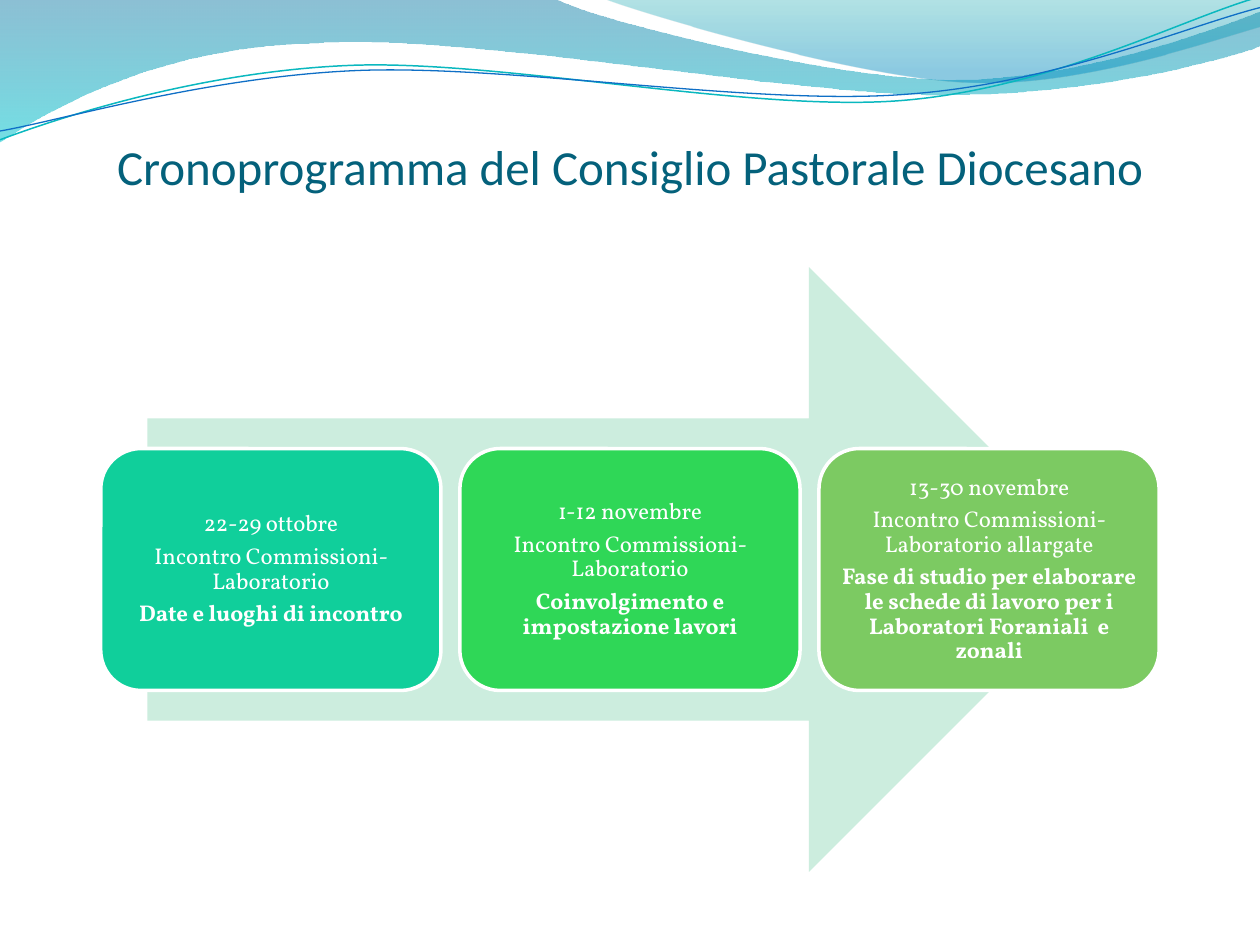
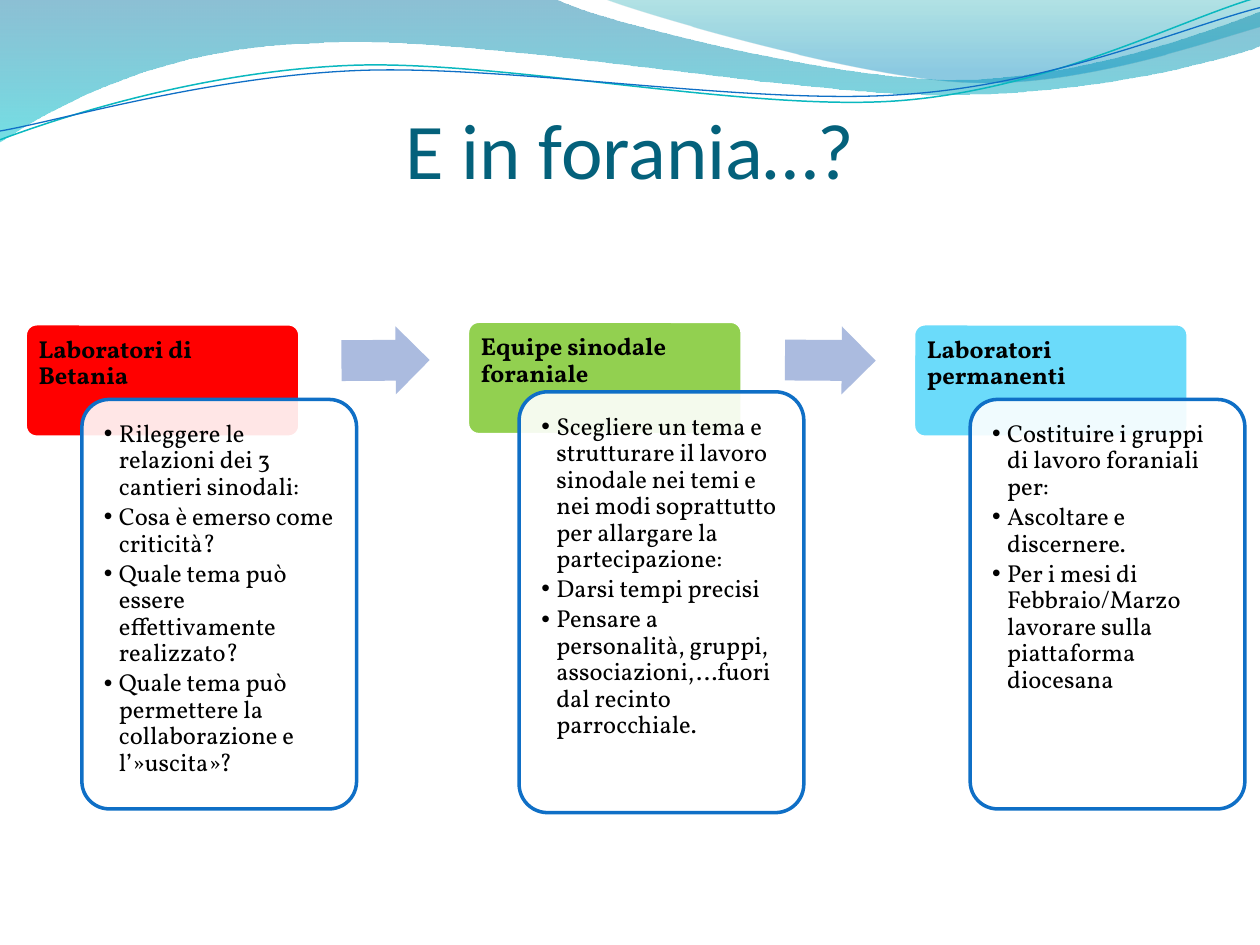
from math import cos, radians, sin

from lxml import etree
from pptx import Presentation
from pptx.dml.color import RGBColor
from pptx.enum.shapes import MSO_SHAPE
from pptx.enum.text import MSO_ANCHOR, PP_ALIGN
from pptx.oxml.ns import qn
from pptx.util import Inches, Pt

ROUND, ARROW = MSO_SHAPE.ROUNDED_RECTANGLE, MSO_SHAPE.RIGHT_ARROW
TOP, MIDDLE, BOTTOM = MSO_ANCHOR.TOP, MSO_ANCHOR.MIDDLE, MSO_ANCHOR.BOTTOM
LEFT, CENTER = PP_ALIGN.LEFT, PP_ALIGN.CENTER
WHITE, BLACK, BLUE, TEAL = "FFFFFF", "000000", "0F6FC6", "04617B"
BODY, HEAD = "Vollkorn", "Calibri"
TILT = 357.3
rgb = RGBColor.from_string


def block(slide, kind, rect, fill, line=None, adj=()):
    shape = slide.shapes.add_shape(kind, *map(Inches, rect))
    shape.shadow.inherit = False
    shape.fill.solid()
    shape.fill.fore_color.rgb = rgb(fill)
    if line:
        shape.line.color.rgb = rgb(line)
        shape.line.width = Pt(2)
    else:
        shape.line.fill.background()
    for i, value in enumerate(adj):
        shape.adjustments[i] = value
    return shape


def write(shape, texts, size, color, pad, anchor, align, face=BODY, bold=(), after=0, bullet=False):
    frame = shape.text_frame
    frame.word_wrap = True
    frame.vertical_anchor = anchor
    frame.margin_left, frame.margin_top, frame.margin_right, frame.margin_bottom = map(Inches, pad)
    for i, text in enumerate(texts):
        para = frame.paragraphs[0] if i == 0 else frame.add_paragraph()
        para.text = text
        para.alignment = align
        if after:
            para.line_spacing = 0.9
            para.space_after = Pt(after)
        if bullet:
            para.level = 1
            props = para._p.get_or_add_pPr()
            props.set("marL", str(Inches(0.12)))
            props.set("indent", str(-Inches(0.12)))
            etree.SubElement(props, qn("a:buFont")).set("typeface", "Arial")
            etree.SubElement(props, qn("a:buChar")).set("char", "•")
        para.font.name = face
        para.font.size = Pt(size)
        para.font.bold = i in bold
        para.font.color.rgb = rgb(color)


deck = Presentation()
deck.slide_width, deck.slide_height = Inches(10), Inches(7.5)

bands = [
    ((-0.01, -0.01, 10.02, 1.14),
     [(0, 0), (4.4, -0.01), (4.76, 0.17, 6.64, 0.63, 7.58, 0.63),
      (8.53, 0.63, 9.58, 0.26, 10, 0.09), (10.01, 0.36),
      (9.83, 0.44, 8.7, 0.76, 7.46, 0.75), (6.22, 0.75, 3.82, 0.28, 2.57, 0.34),
      (1.29, 0.36, 0.46, 0.83, -0.01, 1.13), (0, 0)],
     [(0, "0074A1", 45), (1, "00C6CF", 55)]),
    ((4.79, -0.01, 5.21, 0.7),
     [(4.79, -0.01), (5.09, 0.11, 6.82, 0.62, 7.69, 0.65),
      (8.56, 0.69, 9.61, 0.32, 10, 0.21), (10, 0), (4.79, -0.01)],
     [(0, "00A1A9", 30), (0.8, "008BBF", 45)]),
    ((-0.02, 0.22, 10.02, 0.71),
     [(0, 1.11), (0.48, 0.93, 1.58, 0.57, 2.77, 0.52),
      (3.95, 0.47, 5.93, 0.89, 7.13, 0.8), (8.33, 0.71, 9.38, 0.15, 9.98, -0.02)],
     ("0AB8BF", 0.85)),
    ((-0.02, 0.3, 10.03, 0.58),
     [(0, 1.04), (0.47, 0.96, 1.64, 0.61, 2.83, 0.56),
      (4.03, 0.51, 5.97, 0.84, 7.17, 0.75), (8.36, 0.67, 9.41, 0.21, 10, 0.06)],
     (BLUE, 0.75)),
]
titles = [("Cronoprogramma del Consiglio Pastorale Diocesano", 28), ("E in forania…?", 45)]
slides = []
for title, size in titles:
    slide = deck.slides.add_slide(deck.slide_layouts[6])
    slides.append(slide)
    for rect, route, style in bands:
        filled = isinstance(style, list)
        left, top, width, height = rect
        ends = [(Inches(step[-2]), Inches(step[-1])) for step in route]
        pen = slide.shapes.build_freeform(*ends[0])
        pen.add_line_segments(ends[1:], close=filled)
        wave = pen.convert_to_shape()
        wave.shadow.inherit = False
        wave.left, wave.top, wave.width, wave.height = map(Inches, rect)
        wave.rotation = 0 if filled else TILT
        turn = radians(-wave.rotation)
        mid, half = left + width / 2, top + height / 2
        track = wave._element.find(".//" + qn("a:path"))
        track.set("w", str(Inches(width)))
        track.set("h", str(Inches(height)))
        for old, step in zip(list(track), route):
            kind = "a:cubicBezTo" if len(step) == 6 else old.tag
            move = etree.Element(qn(kind) if len(step) == 6 else kind)
            for x, y in zip(step[::2], step[1::2]):
                dx, dy = x - mid, y - half
                spot = etree.SubElement(move, qn("a:pt"))
                spot.set("x", str(Inches(width / 2 + dx * cos(turn) - dy * sin(turn))))
                spot.set("y", str(Inches(height / 2 + dx * sin(turn) + dy * cos(turn))))
            track.replace(old, move)
        if filled:
            wave.line.fill.background()
            wave.fill.gradient()
            wave.fill.gradient_angle = 270
            tones = list(wave._element.spPr.iter(qn("a:gs")))
            for stop, tone, (place, color, alpha) in zip(wave.fill.gradient_stops, tones, style):
                stop.position = place
                stop.color.rgb = rgb(color)
                etree.SubElement(tone[0], qn("a:alpha")).set("val", str(alpha * 1000))
        else:
            wave.fill.background()
            wave.line.color.rgb = rgb(style[0])
            wave.line.width = Pt(style[1])
    label = slide.shapes.add_textbox(*map(Inches, (0.5, 0.77, 9, 0.78)))
    write(label, [title], size, TEAL, (0, 0.05, 0, 0), BOTTOM, CENTER, HEAD)

plan, local = slides

block(plan, ARROW, (1.17, 2.12, 7.65, 4.8), "CCEDDE")
phases = [
    ("10CF9B", ["22-29 ottobre", "Incontro Commissioni-Laboratorio",
                "Date e luoghi di incontro"]),
    ("2FD757", ["1-12 novembre", "Incontro Commissioni-Laboratorio",
                "Coinvolgimento e impostazione lavori"]),
    ("7CCA62", ["13-30 novembre", "Incontro Commissioni-Laboratorio allargate",
                "Fase di studio per elaborare le schede di lavoro per i Laboratori Foraniali  e zonali"]),
]
for i, (color, texts) in enumerate(phases):
    phase = block(plan, ROUND, (0.8 + 2.85 * i, 3.56, 2.7, 1.92), color, WHITE)
    write(phase, texts, 13, WHITE, [0.05] * 4, MIDDLE, CENTER, bold=[2], after=4.55)

groups = [
    ("Laboratori di Betania", "FF0000", (0.2, 2.57), (0.65, 3.17, 2.18, 3.25),
     ["Rileggere le relazioni dei 3 cantieri sinodali:",
      "Cosa è emerso come criticità?",
      "Quale tema può essere effettivamente realizzato?",
      "Quale tema può permettere la collaborazione e l’»uscita»?"]),
    ("Equipe sinodale foraniale", "92D050", (3.71, 2.55), (4.12, 3.11, 2.26, 3.34),
     ["Scegliere un tema e strutturare il lavoro sinodale nei temi e nei modi "
      "soprattutto per allargare la partecipazione:",
      "Darsi tempi precisi",
      "Pensare a personalità, gruppi, associazioni,…fuori dal recinto parrocchiale."]),
    ("Laboratori permanenti", "6BDBFA", (7.25, 2.57), (7.7, 3.17, 2.18, 3.25),
     ["Costituire i gruppi di lavoro foraniali per:",
      "Ascoltare e discernere.",
      "Per i mesi di Febbraio/Marzo lavorare sulla piattaforma diocesana"]),
]
for name, color, spot, rect, texts in groups:
    tab = block(local, ROUND, (*spot, 2.18, 0.9), color, WHITE, [0.1])
    write(tab, [name], 14, BLACK, [0.08] * 4, TOP, LEFT, bold=[0], after=4.9)
    card = block(local, ROUND, rect, WHITE, BLUE, [0.1])
    tone = card._element.spPr.find(".//" + qn("a:srgbClr"))
    etree.SubElement(tone, qn("a:alpha")).set("val", "90000")
    write(card, texts, 14, BLACK, [0.11] * 4, TOP, LEFT, after=2.1, bullet=True)

for left, width, turn in [(2.71, 0.7, 359.6), (6.23, 0.72, 0.4)]:
    arrow = block(local, ARROW, (left, 2.59, width, 0.54), "ABBBDF", adj=[0.6, 0.5])
    arrow.rotation = turn

deck.save("out.pptx")
